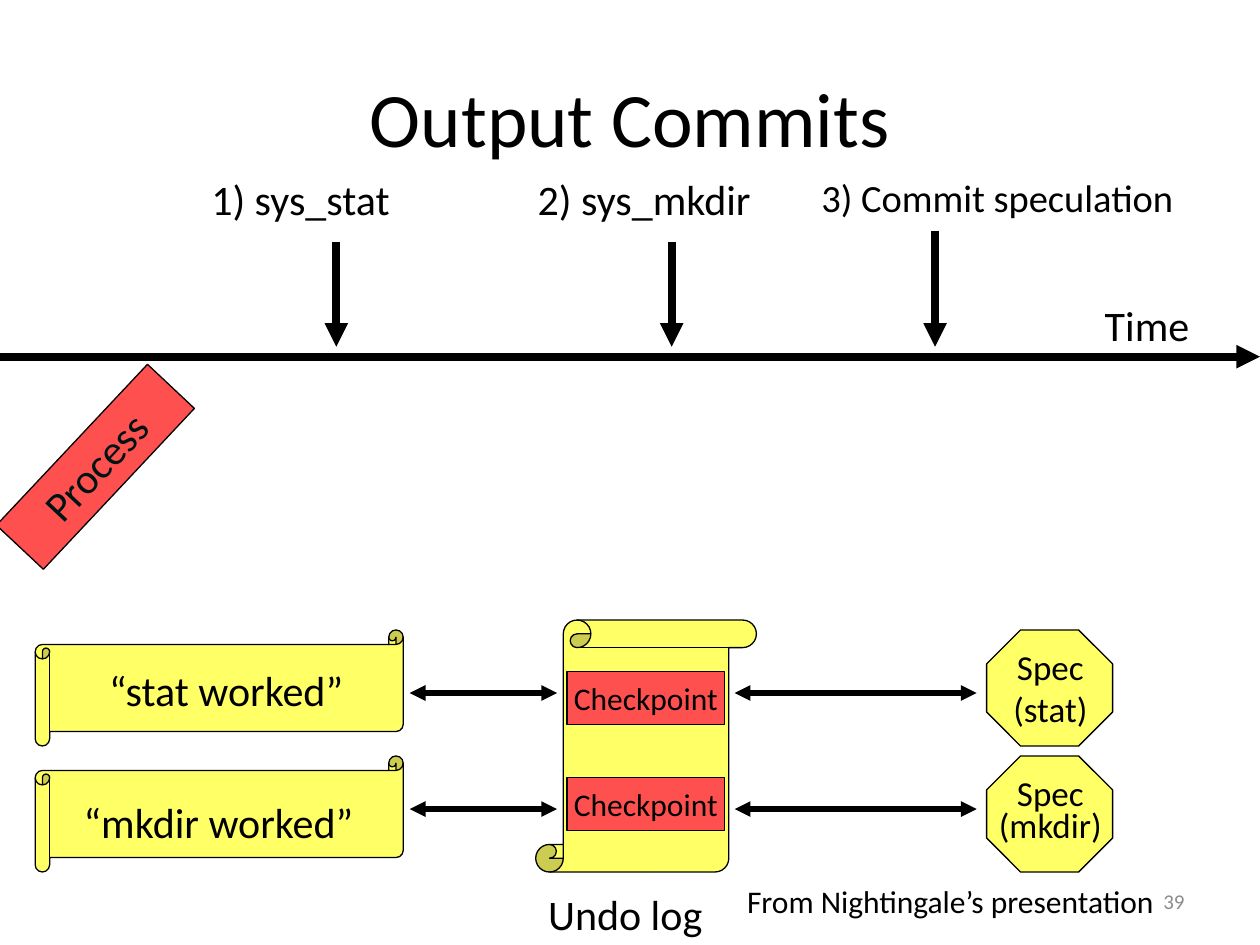
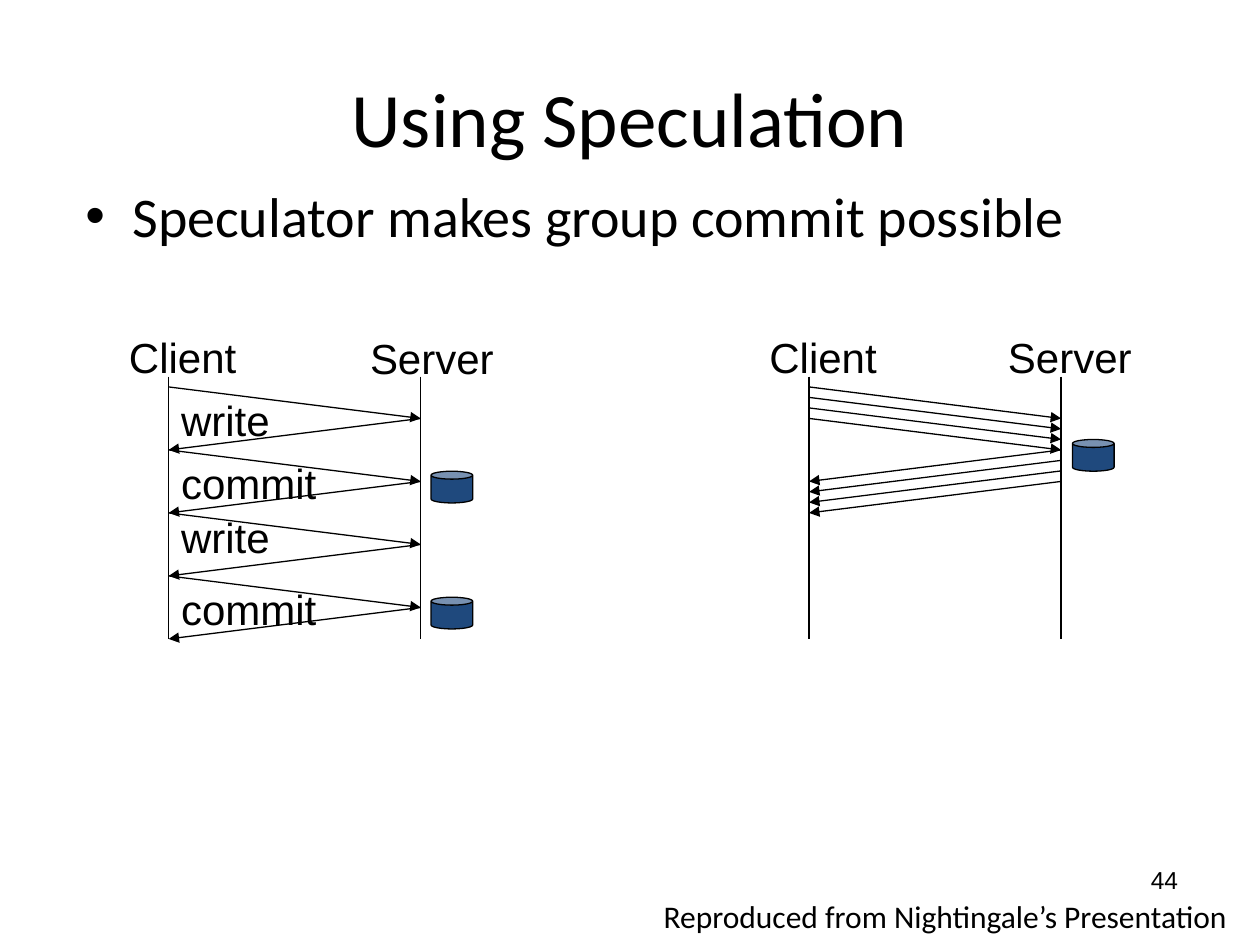
from lxml import etree
from pptx import Presentation
from pptx.dml.color import RGBColor
from pptx.enum.shapes import MSO_CONNECTOR, MSO_SHAPE
from pptx.enum.text import MSO_ANCHOR, PP_ALIGN
from pptx.oxml.ns import qn
from pptx.util import Cm, Pt

STRAIGHT = MSO_CONNECTOR.STRAIGHT
RECTANGLE, OCTAGON, CAN = MSO_SHAPE.RECTANGLE, MSO_SHAPE.OCTAGON, MSO_SHAPE.CAN
WIDE_SCROLL, TALL_SCROLL = MSO_SHAPE.HORIZONTAL_SCROLL, MSO_SHAPE.VERTICAL_SCROLL
TOP, MIDDLE = MSO_ANCHOR.TOP, MSO_ANCHOR.MIDDLE
LEFT, CENTER, RIGHT = PP_ALIGN.LEFT, PP_ALIGN.CENTER, PP_ALIGN.RIGHT

COLORS = {
    "black": "000000",
    "gray": "8C8C8C",
    "ink": "001414",
    "yellow": "FFFF66",
    "red": "FF5050",
    "navy": "1F497D",
}
BODY_FONT, DIAGRAM_FONT = "Calibri", "Arial"


def add_box(page, place, words="", kind=None, fill=None, size=24, font=BODY_FONT,
            color="black", align=LEFT, anchor=TOP, wrap=True):
    lengths = [Cm(value) for value in place]
    if kind is None:
        box = page.shapes.add_textbox(*lengths)
    else:
        box = page.shapes.add_shape(kind, *lengths)
        box.shadow.inherit = False
        box.fill.solid()
        box.fill.fore_color.rgb = RGBColor.from_string(COLORS[fill])
        box.line.color.rgb = RGBColor.from_string(COLORS["black"])
        box.line.width = Pt(0.75)
    if words:
        frame = box.text_frame
        frame.word_wrap = wrap
        frame.vertical_anchor = anchor
        para = frame.paragraphs[0]
        para.text = words
        para.alignment = align
        para.font.name = font
        para.font.size = Pt(size)
        para.font.color.rgb = RGBColor.from_string(COLORS[color])
    return box


def add_line(page, start, end, width=0.75, arrows=("tailEnd",)):
    points = [Cm(value) for value in (*start, *end)]
    line = page.shapes.add_connector(STRAIGHT, *points)
    line.line.color.rgb = RGBColor.from_string(COLORS["black"])
    line.line.width = Pt(width)
    properties = line.element.spPr
    outline = properties.find(qn("a:ln"))
    for arrow in arrows:
        etree.SubElement(outline, qn(f"a:{arrow}"), type="triangle")
    etree.SubElement(properties, qn("a:effectLst"))


deck = Presentation()
deck.slide_width, deck.slide_height = Cm(25.4), Cm(19.05)
pages = []
for title in ("Output Commits", "Using Speculation"):
    page = deck.slides.add_slide(deck.slide_layouts[6])
    add_box(page, (1.27, 0.76, 22.86, 3.18), title, size=44, align=CENTER, anchor=MIDDLE)
    pages.append(page)
commits, speculation = pages

add_box(commits, (18.21, 17.65, 5.92, 1.02), "39", size=12, color="gray",
        align=RIGHT, anchor=MIDDLE)
add_box(commits, (14.81, 17.65, 8.81, 1.02), "From Nightingale’s presentation",
        size=18, wrap=False)

add_line(commits, (0, 7.19), (25.4, 7.19), width=4.5)
add_box(commits, (22.02, 5.92, 4.24, 1.27), "Time")
for label, label_left, label_width, size, arrow_x, arrow_top in (
    ("1) sys_stat", 4.01, 6.15, 24, 6.78, 4.88),
    ("2) sys_mkdir", 10.59, 5.72, 24, 13.54, 4.88),
    ("3) Commit speculation", 16.31, 8.46, 22, 18.85, 4.65),
):
    add_box(commits, (label_left, 3.38, label_width, 1.27), label, size=size)
    add_line(commits, (arrow_x, arrow_top), (arrow_x, 6.99), width=4.5)

process = add_box(commits, (-0.3, 8.76, 4.45, 1.3), "Process", RECTANGLE, "red",
                  color="ink", align=CENTER)
process.rotation = 313.2

add_box(commits, (10.8, 12.5, 4.45, 5.08), kind=TALL_SCROLL, fill="yellow")
add_box(commits, (10.8, 17.78, 4.65, 1.27), "Undo log")
for row_top, arrow_y, checkpoint_top, result, result_place in (
    (12.7, 13.97, 13.54, "“stat worked”", (1.7, 13.28, 5.72, 1.27)),
    (15.24, 16.31, 15.67, "“mkdir worked”", (0.81, 15.93, 7.19, 1.27)),
):
    add_box(commits, (0.71, row_top, 7.42, 2.34), kind=WIDE_SCROLL, fill="yellow")
    add_box(commits, result_place, result, align=CENTER)
    add_box(commits, (11.43, checkpoint_top, 3.18, 1.07), "Checkpoint", RECTANGLE, "red",
            size=18, align=CENTER, anchor=MIDDLE, wrap=False)
    add_box(commits, (19.89, row_top, 2.54, 2.34), kind=OCTAGON, fill="yellow")
    for left, right in ((8.26, 11.23), (14.81, 19.69)):
        add_line(commits, (left, arrow_y), (right, arrow_y), 3, ("headEnd", "tailEnd"))
for words, top, height in (
    ("Spec\v(stat)", 12.88, 1.96), ("Spec", 15.42, 1.09), ("(mkdir)", 16.08, 1.09),
):
    add_box(commits, (18.85, top, 4.65, height), words, size=20, align=CENTER)

add_box(speculation, (18.08, 17.32, 5.92, 1.32), "44", size=14, font=DIAGRAM_FONT,
        align=RIGHT)
add_box(speculation, (13.13, 17.96, 12.01, 1.02),
        "Reproduced from Nightingale’s Presentation", size=18, wrap=False)

body = add_box(speculation, (1.47, 3.53, 23.5, 12.57),
               "Speculator makes group commit possible", size=32)
bullet = body.text_frame.paragraphs[0]._p.get_or_add_pPr()
bullet.set("marL", str(Cm(0.95)))
bullet.set("indent", str(-Cm(0.95)))
bullet_font = etree.Element(qn("a:buFont"), typeface="Arial")
bullet_mark = etree.Element(qn("a:buChar"), char="•")
bullet.insert(0, bullet_font)
bullet.insert(1, bullet_mark)

SPAN, FLIGHT, FIRST_SEND = 5.08, 0.635, 7.8
SYNC_CLIENT, GROUP_CLIENT = 3.4, 16.31
for client, server_label_left, server_label_top in (
    (SYNC_CLIENT, 7.21, 6.58), (GROUP_CLIENT, 20.07, 6.55),
):
    for lifeline in (client, client + SPAN):
        add_line(speculation, (lifeline, 7.59), (lifeline, 12.88), arrows=())
    add_box(speculation, (client - 1.05, 6.55, 2.69, 1.27), "Client",
            font=DIAGRAM_FONT, wrap=False)
    add_box(speculation, (server_label_left, server_label_top, 3, 1.27), "Server",
            font=DIAGRAM_FONT, wrap=False)

sync_sends = [FIRST_SEND + 2 * FLIGHT * step for step in range(4)]
group_sends = [FIRST_SEND + FLIGHT / 3 * step for step in range(4)]
for client, sends, reply_delay in (
    (SYNC_CLIENT, sync_sends, FLIGHT), (GROUP_CLIENT, group_sends, 2 * FLIGHT),
):
    server = client + SPAN
    for send in sends:
        reply = send + reply_delay
        add_line(speculation, (client, send), (server, send + FLIGHT))
        add_line(speculation, (server, reply), (client, reply + FLIGHT))

for request, top, width in (
    ("write", 7.82, 2.31), ("commit", 9.09, 3.25),
    ("write", 10.19, 2.31), ("commit", 11.63, 3.25),
):
    add_box(speculation, (SYNC_CLIENT, top, width, 1.27), request,
            font=DIAGRAM_FONT, wrap=False)
for disk_left, disk_top in ((8.69, 9.5), (8.69, 12.04), (21.62, 8.86)):
    add_box(speculation, (disk_left, disk_top, 0.84, 0.64), kind=CAN, fill="navy")

deck.save("out.pptx")
